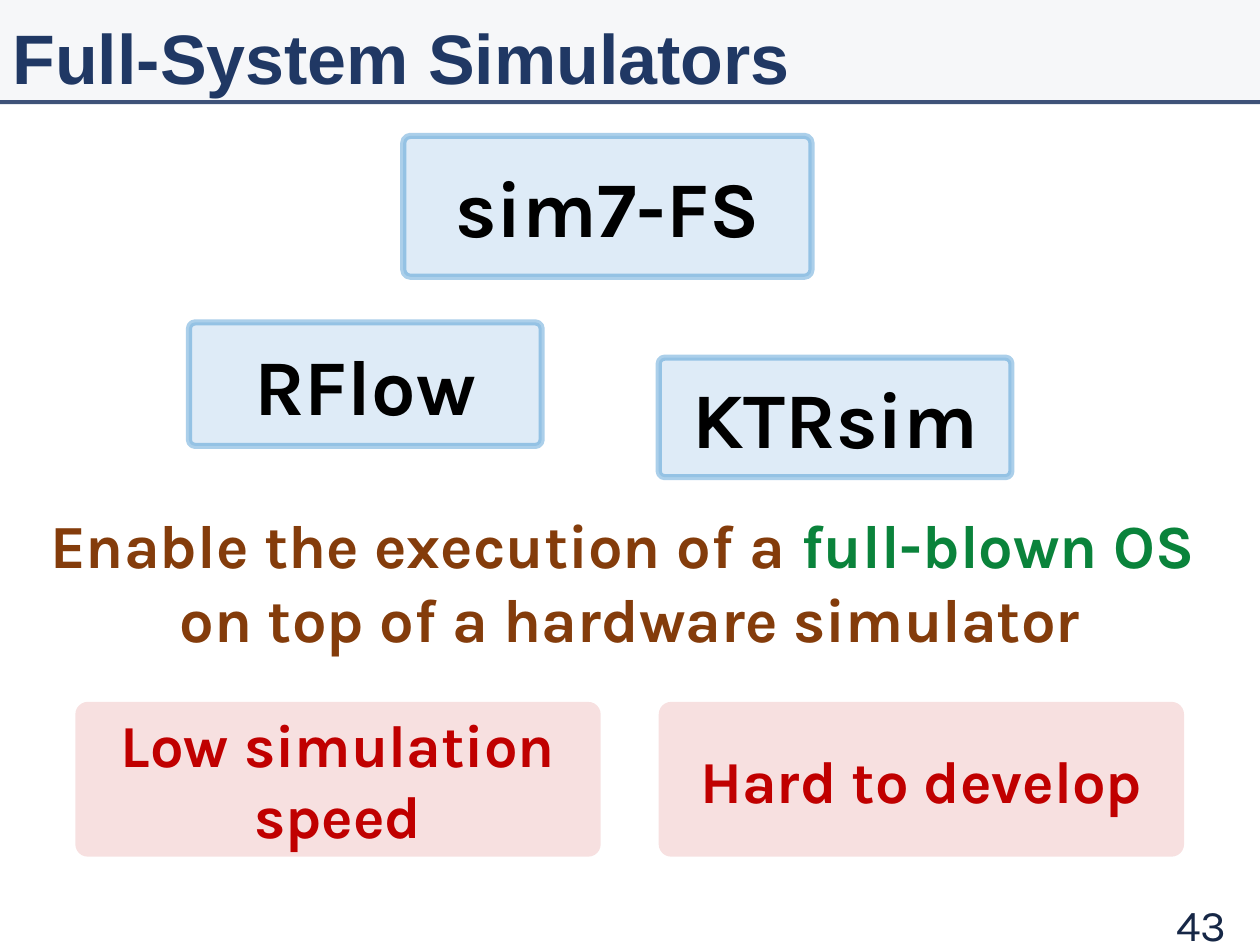
from dataclasses import dataclass

from pptx import Presentation
from pptx.dml.color import RGBColor
from pptx.enum.shapes import MSO_CONNECTOR, MSO_SHAPE
from pptx.enum.text import MSO_ANCHOR, MSO_AUTO_SIZE, PP_ALIGN
from pptx.oxml.ns import qn
from pptx.oxml.xmlchemy import OxmlElement
from pptx.util import Cm, Pt

NAVY = RGBColor(0x20, 0x38, 0x64)
INK = RGBColor(0x16, 0x27, 0x46)
SLATE = RGBColor(0xAD, 0xB9, 0xCA)
PALE = RGBColor(0xDE, 0xEB, 0xF7)
BLUE = RGBColor(0x00, 0x70, 0xC0)
BLACK = RGBColor(0, 0, 0)
BROWN = RGBColor(0x84, 0x3C, 0x0B)
GREEN = RGBColor(0x0A, 0x83, 0x3B)
RED = RGBColor(0xC0, 0, 0)
WIDE, HIGH, RULE = 25.4, 19.05, 2.06


@dataclass
class Style:
    fill: RGBColor
    ink: RGBColor
    size: int
    round: float
    alpha: int = 100
    edge: RGBColor | None = None


@dataclass
class Card:
    text: str
    left: float
    top: float
    width: float
    height: float
    style: Style


TOOL = Style(PALE, BLACK, 45, 0.05, edge=BLUE)
FLAW = Style(RED, RED, 34, 0.08, alpha=12)
CARDS = [
    Card("sim7-FS", 8.13, 2.74, 8.23, 2.84, TOOL),
    Card("RFlow", 3.81, 6.5, 7.11, 2.49, TOOL),
    Card("KTRsim", 13.28, 7.21, 7.11, 2.41, TOOL),
    Card("Low simulation speed", 1.52, 14.15, 10.59, 3.12, FLAW),
    Card("Hard to develop", 13.28, 14.15, 10.59, 3.12, FLAW),
]
CLAIM = [
    [("Enable the execution of a ", BROWN), ("full-blown OS ", GREEN)],
    [("on top of a hardware simulator", BROWN)],
]


def fade(node, share: int) -> None:
    """Set the opacity, in percent, of the first colour under node."""
    alpha = OxmlElement("a:alpha")
    alpha.set("val", str(share * 1000))
    next(node.iter(qn("a:srgbClr"))).append(alpha)


def style_font(font, size: int, name: str = "Karla", ink=None, bold=True) -> None:
    font.size, font.name, font.bold = Pt(size), name, bold
    if ink is not None:
        font.color.rgb = ink


def add_bar(slide) -> None:
    bar = slide.shapes.add_shape(MSO_SHAPE.RECTANGLE, 0, 0, Cm(WIDE), Cm(RULE))
    bar.shadow.inherit = False
    bar.fill.solid()
    bar.fill.fore_color.rgb = SLATE
    bar.line.fill.background()
    fade(bar.element.spPr, 10)
    rule = slide.shapes.add_connector(
        MSO_CONNECTOR.STRAIGHT, 0, Cm(RULE), Cm(WIDE), Cm(RULE))
    rule.line.color.rgb = NAVY
    rule.line.width = Pt(2.25)
    fade(rule.element.spPr, 86)
    rule.element.spPr.append(OxmlElement("a:effectLst"))


def add_title(slide, text: str) -> None:
    title = slide.shapes.title
    slide.shapes.element.append(title.element)  # in front of the bar
    title.left, title.top, title.width, title.height = 0, 0, Cm(21.89), Cm(2.49)
    frame = title.text_frame
    frame.text = text
    frame.auto_size = MSO_AUTO_SIZE.NONE
    frame.vertical_anchor = MSO_ANCHOR.MIDDLE
    para = frame.paragraphs[0]
    para.alignment, para.line_spacing = PP_ALIGN.LEFT, 0.9
    style_font(para.font, 40, "Arial", NAVY)


def add_number(slide, text: str) -> None:
    box = slide.shapes.add_textbox(Cm(19.25), Cm(18.11), Cm(5.72), Cm(1.02))
    frame = box.text_frame
    frame.word_wrap = True
    frame.vertical_anchor = MSO_ANCHOR.MIDDLE
    para = frame.paragraphs[0]
    para.text, para.alignment = text, PP_ALIGN.RIGHT
    style_font(para.font, 25, ink=INK, bold=False)


def add_card(slide, card: Card) -> None:
    look = card.style
    shape = slide.shapes.add_shape(
        MSO_SHAPE.ROUNDED_RECTANGLE,
        Cm(card.left), Cm(card.top), Cm(card.width), Cm(card.height))
    shape.adjustments[0] = look.round
    shape.shadow.inherit = False
    shape.fill.solid()
    shape.fill.fore_color.rgb = look.fill
    if look.alpha < 100:
        fade(shape.element.spPr, look.alpha)
    if look.edge is None:
        shape.line.fill.background()
    else:
        shape.line.color.rgb = look.edge
        shape.line.width = Pt(3.5)
        fade(shape.element.spPr.find(qn("a:ln")), 32)
    frame = shape.text_frame
    frame.word_wrap = True
    frame.vertical_anchor = MSO_ANCHOR.MIDDLE
    para = frame.paragraphs[0]
    para.text, para.alignment = card.text, PP_ALIGN.CENTER
    style_font(para.font, look.size, ink=look.ink)


def add_claim(slide) -> None:
    box = slide.shapes.add_textbox(Cm(0.03), Cm(10.11), Cm(25.35), Cm(3.25))
    frame = box.text_frame
    frame.word_wrap = True
    for i, line in enumerate(CLAIM):
        para = frame.add_paragraph() if i else frame.paragraphs[0]
        para.alignment = PP_ALIGN.CENTER
        style_font(para.font, 35)
        for text, ink in line:
            run = para.add_run()
            run.text = text
            run.font.color.rgb = ink


def main() -> None:
    deck = Presentation()
    deck.slide_width, deck.slide_height = Cm(WIDE), Cm(HIGH)
    slide = deck.slides.add_slide(deck.slide_layouts.get_by_name("Title Only"))
    add_bar(slide)
    add_number(slide, "43")
    add_title(slide, "Full-System Simulators")
    for card in CARDS:
        add_card(slide, card)
    add_claim(slide)
    deck.save("out.pptx")


if __name__ == "__main__":
    main()
